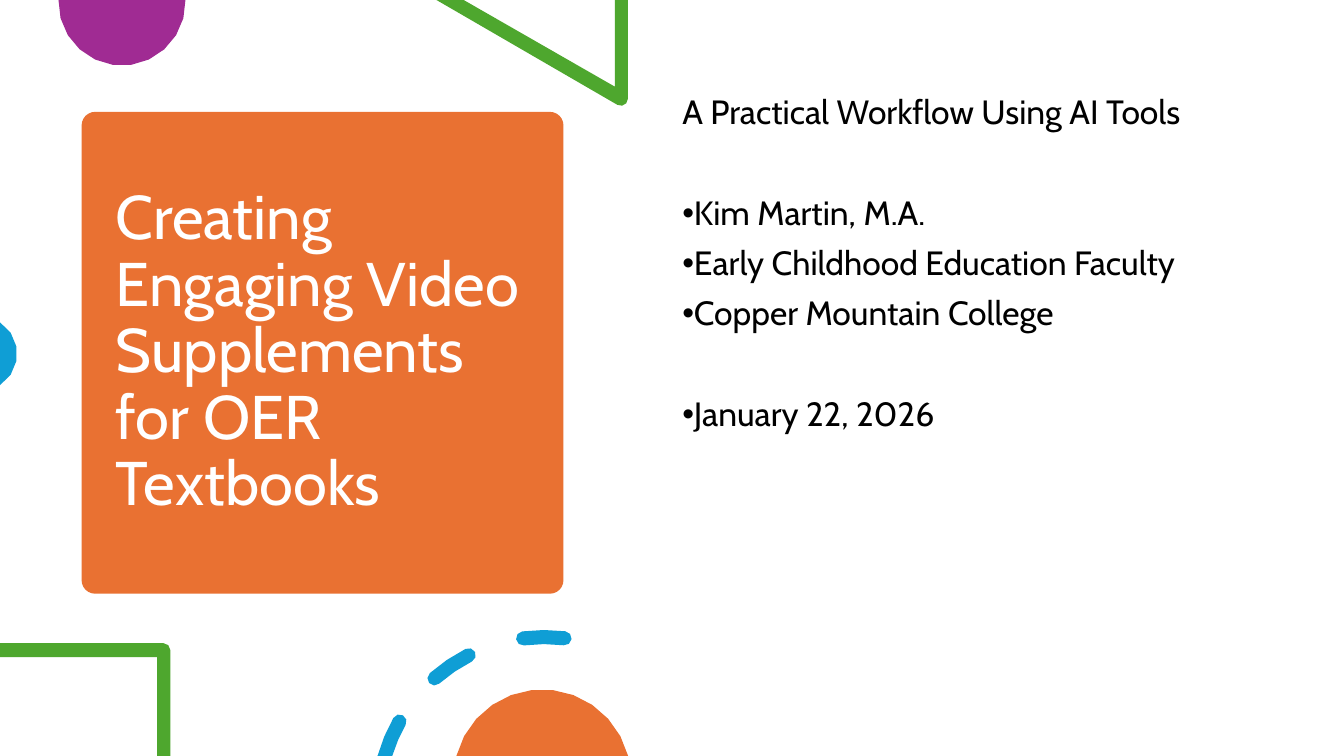
"""Builds the opening slide of a talk on video supplements for OER textbooks."""
import math
from dataclasses import dataclass
from typing import Optional

import lxml.etree
import pptx
import pptx.dml.color
import pptx.enum.shapes
import pptx.enum.text
import pptx.oxml.ns
import pptx.util

Inches = pptx.util.Inches
Pt = pptx.util.Pt
RGBColor = pptx.dml.color.RGBColor
Points = list[tuple[float, float]]

ORANGE = RGBColor(0xE9, 0x71, 0x32)
PURPLE = RGBColor(0xA0, 0x2B, 0x93)
GREEN = RGBColor(0x4E, 0xA7, 0x2E)
BLUE = RGBColor(0x0F, 0x9E, 0xD5)
WHITE = RGBColor(0xFF, 0xFF, 0xFF)
BLACK = RGBColor(0, 0, 0)
FONT = "Cabin"
SLIDE_HEIGHT = 7.5
SLIDE_WIDTH = SLIDE_HEIGHT * 16 / 9
STROKE = 0.14
RING_X, RING_Y, RING_RADIUS = 5.4, 7.97, 1.65


@dataclass(frozen=True)
class Disc:
    x: float
    y: float
    radius: float
    start: float
    end: float
    color: RGBColor


@dataclass(frozen=True)
class Dash:
    start: Optional[float]
    end: float


@dataclass(frozen=True)
class Line:
    text: str
    bulleted: bool = True
    space_before: float = 10


DISCS = [
    Disc(1.21, 0.02, 0.63, -1.8, 181.8, PURPLE),
    Disc(-0.2, 3.51, 0.37, -57, 57, BLUE),
    Disc(5.38, 7.72, 0.88, 194.5, 345.5, ORANGE),
]
DASHES = [Dash(None, 209.5), Dash(228.7, 243), Dash(262.7, 277)]
LINES = [
    Line("A Practical Workflow Using AI Tools", bulleted=False, space_before=0),
    Line("Kim Martin, M.A.", space_before=46),
    Line("Early Childhood Education Faculty"),
    Line("Copper Mountain College"),
    Line("January 22, 2026", space_before=46),
]


def arc(x: float, y: float, radius: float, start: float, end: float) -> Points:
    """Return points along an arc, with angles in degrees clockwise from the right."""
    steps = max(2, math.ceil(math.sqrt(radius) * abs(end - start) / 14))
    angles = [math.radians(start + (end - start) * i / steps) for i in range(steps + 1)]
    return [(x + radius * math.cos(a), y + radius * math.sin(a)) for a in angles]


def dash_outline(dash: Dash) -> Points:
    """Return a round-capped piece of the ring, cut at the slide's foot if it has no start."""
    def start_on(radius: float) -> float:
        """Return the angle at which this radius begins."""
        if dash.start is not None:
            return dash.start
        return 180 + math.degrees(math.asin((RING_Y - SLIDE_HEIGHT) / radius))

    def cap(angle: float, turn: float) -> Points:
        """Return the inner points of the half circle that rounds one end."""
        x, y = arc(RING_X, RING_Y, RING_RADIUS, angle, angle)[0]
        return arc(x, y, STROKE / 2, turn, turn + 180)[1:-1]

    outer, inner = RING_RADIUS + STROKE / 2, RING_RADIUS - STROKE / 2
    outline = arc(RING_X, RING_Y, outer, start_on(outer), dash.end)
    outline += cap(dash.end, dash.end)
    outline += arc(RING_X, RING_Y, inner, dash.end, start_on(inner))
    if dash.start is not None:
        outline += cap(dash.start, dash.start + 180)
    return outline


def paint(shape, color: RGBColor) -> None:
    """Give a shape a flat fill without line or shadow."""
    shape.shadow.inherit = False
    shape.fill.solid()
    shape.fill.fore_color.rgb = color
    shape.line.fill.background()


def draw_outlines(slide, outlines: list[Points], color: RGBColor) -> None:
    """Draw closed outlines as one freeform."""
    contours = [[(Inches(x), Inches(y)) for x, y in outline] for outline in outlines]
    builder = slide.shapes.build_freeform(*contours[0][0], scale=1.0)
    for index, contour in enumerate(contours):
        if index:
            builder.move_to(*contour[0])
        builder.add_line_segments(contour[1:], close=True)
    paint(builder.convert_to_shape(), color)


def write(paragraph, text: str, size: float, color: RGBColor) -> None:
    """Add one left-aligned run of text."""
    paragraph.alignment = pptx.enum.text.PP_ALIGN.LEFT
    paragraph.line_spacing = 0.9
    run = paragraph.add_run()
    run.text = text
    run.font.name = FONT
    run.font.size = Pt(size)
    run.font.color.rgb = color


def add_bullet(paragraph) -> None:
    """Put a hanging bullet before a paragraph."""
    properties = paragraph._p.get_or_add_pPr()
    properties.set("marL", "0")
    properties.set("indent", str(-Inches(0.25)))
    qn = pptx.oxml.ns.qn
    lxml.etree.SubElement(properties, qn("a:buFont")).set("typeface", "Arial")
    lxml.etree.SubElement(properties, qn("a:buChar")).set("char", "•")


def draw_title(slide) -> None:
    """Draw the title on its orange card."""
    card = slide.shapes.add_shape(
        pptx.enum.shapes.MSO_SHAPE.ROUNDED_RECTANGLE,
        Inches(0.81), Inches(1.11), Inches(4.78), Inches(4.78))
    card.adjustments[0] = 0.028
    paint(card, ORANGE)
    title = slide.shapes.title
    title.element.addprevious(card.element)
    title.left, title.top = Inches(1.05), Inches(1.22)
    title.width, title.height = Inches(4.31), Inches(4.56)
    frame = title.text_frame
    frame.word_wrap = True
    frame.auto_size = pptx.enum.text.MSO_AUTO_SIZE.NONE
    frame.vertical_anchor = pptx.enum.text.MSO_ANCHOR.MIDDLE
    write(frame.paragraphs[0], "Creating Engaging Video Supplements for OER Textbooks", 44, WHITE)


def draw_details(slide) -> None:
    """Draw the subtitle, speaker and date."""
    details = slide.shapes.add_textbox(Inches(6.67), Inches(0.9), Inches(5.75), Inches(5.35))
    frame = details.text_frame
    frame.word_wrap = True
    for index, line in enumerate(LINES):
        paragraph = frame.add_paragraph() if index else frame.paragraphs[0]
        if line.bulleted:
            add_bullet(paragraph)
        paragraph.space_before = Pt(line.space_before)
        write(paragraph, line.text, 24, BLACK)


def main() -> None:
    """Build and save the slide."""
    deck = pptx.Presentation()
    deck.slide_width, deck.slide_height = Inches(SLIDE_WIDTH), Inches(SLIDE_HEIGHT)
    slide = deck.slides.add_slide(deck.slide_layouts[5])
    draw_title(slide)
    triangle = [(4.33, 0), *arc(6.16, 0.98, 0.07, 120, 0),
                (6.23, 0), (6.1, 0), (6.1, 0.86), (4.6, 0)]
    square = [(0, 6.38), *arc(1.62, 6.45, 0.07, -90, 0),
              (1.69, 7.5), (1.56, 7.5), (1.56, 6.52), (0, 6.52)]
    for corner in (triangle, square):
        draw_outlines(slide, [corner], GREEN)
    draw_outlines(slide, [dash_outline(dash) for dash in DASHES], BLUE)
    for disc in DISCS:
        draw_outlines(slide, [arc(disc.x, disc.y, disc.radius, disc.start, disc.end)], disc.color)
    draw_details(slide)
    deck.save("out.pptx")


if __name__ == "__main__":
    main()
